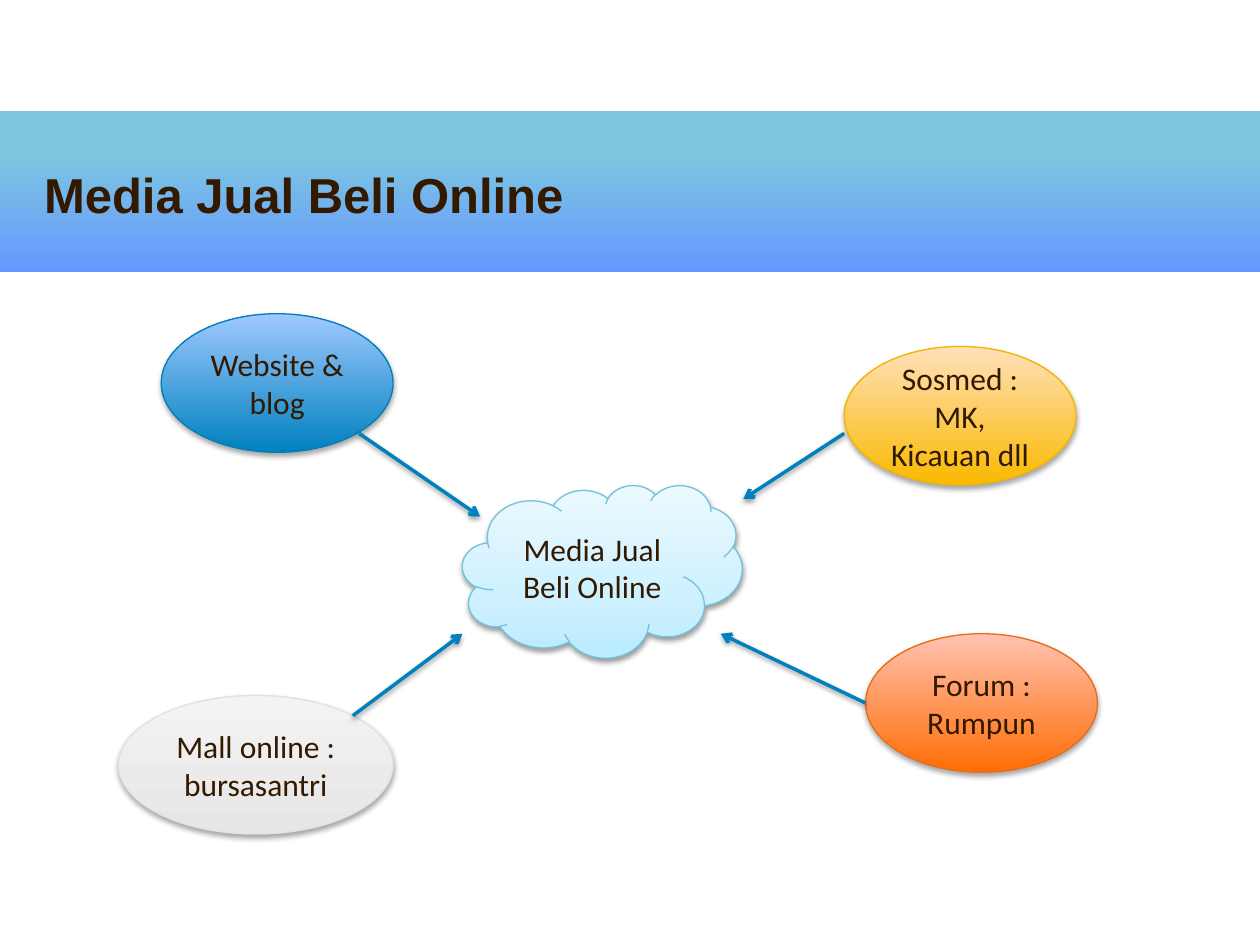
from dataclasses import dataclass

from lxml.etree import SubElement
from pptx import Presentation
from pptx.dml.color import RGBColor
from pptx.enum.shapes import MSO_CONNECTOR, MSO_SHAPE
from pptx.enum.text import MSO_ANCHOR as Anchor, PP_ALIGN as Align
from pptx.oxml.ns import qn
from pptx.util import Inches, Pt

INK = "321900"
ARROW_BLUE = "0081BE"


@dataclass(frozen=True)
class Bubble:
    text: str
    box: tuple[float, float, float, float]
    stops: tuple[tuple[int, str], ...]
    outline: str
    kind: MSO_SHAPE = MSO_SHAPE.OVAL
    shadow_alpha: int = 35
    shadow_distance: float = 1.8


@dataclass(frozen=True)
class Arrow:
    start: tuple[float, float]
    end: tuple[float, float]


BUBBLES = [
    Bubble("Media Jual Beli Online", (3.67, 3.85, 2.22, 1.37),
           ((0, "BAEBFF"), (35, "CEF1FF"), (100, "ECF9FF")), "73C2DB",
           MSO_SHAPE.CLOUD, 38, 1.6),
    Bubble("Sosmed : MK, Kicauan dll", (6.7, 2.75, 1.84, 1.1),
           ((0, "FAB900"), (100, "FFE0BA")), "F4B500"),
    Bubble("Forum : Rumpun", (6.87, 5.03, 1.84, 1.1),
           ((0, "FF6D04"), (100, "FFC2B2")), "E76E16"),
    Bubble("Website & blog", (1.28, 2.49, 1.84, 1.1),
           ((0, "0081BE"), (100, "9FC9FF")), "007EBA"),
    Bubble("Mall online : bursasantri", (0.94, 5.52, 2.18, 1.1),
           ((0, "E6E6E6"), (100, "F3F3F3")), "E1E1E1"),
]

ARROWS = [
    Arrow((2.85, 3.44), (3.81, 4.1)),
    Arrow((6.7, 3.44), (5.9, 3.96)),
    Arrow((6.87, 5.58), (5.72, 5.03)),
    Arrow((2.8, 5.68), (3.67, 5.03)),
]


def color(value: str) -> RGBColor:
    return RGBColor.from_string(value)


def write(shape, text: str, *, font: str = "Calibri", size: float = 18,
          bold: bool = False, align=Align.CENTER, anchor=Anchor.MIDDLE) -> None:
    frame = shape.text_frame
    frame.word_wrap = True
    frame.vertical_anchor = anchor
    frame.text = text
    paragraph = frame.paragraphs[0]
    paragraph.alignment = align
    paragraph.space_before = Pt(0)
    face = paragraph.runs[0].font
    face.name, face.size, face.bold = font, Pt(size), bold
    face.color.rgb = color(INK)


def fill_gradient(shape, stops: tuple[tuple[int, str], ...], angle: int) -> None:
    """Fill along an angle given in degrees, clockwise from the right."""
    shape.fill.gradient()
    shape.fill.gradient_angle = 360 - angle
    stop_list = shape.fill._xPr.find(qn("a:gradFill")).find(qn("a:gsLst"))
    for stop in list(stop_list):
        stop_list.remove(stop)
    for position, value in stops:
        stop = SubElement(stop_list, qn("a:gs"), pos=str(position * 1000))
        SubElement(stop, qn("a:srgbClr"), val=value)


def cast_shadow(properties, alpha: int, distance: float) -> None:
    """Add a soft black shadow that falls straight down."""
    effects = properties.find(qn("a:effectLst"))
    if effects is None:
        effects = SubElement(properties, qn("a:effectLst"))
    shadow = SubElement(effects, qn("a:outerShdw"), blurRad=str(Pt(3.1)),
                        dist=str(Pt(distance)), dir="5400000", rotWithShape="0")
    black = SubElement(shadow, qn("a:srgbClr"), val="000000")
    SubElement(black, qn("a:alpha"), val=str(alpha * 1000))


def draw_band(slide) -> None:
    band = slide.shapes.add_shape(MSO_SHAPE.RECTANGLE, 0, Inches(0.88),
                                  Inches(10), Inches(1.28))
    band.shadow.inherit = False
    band.line.fill.background()
    fill_gradient(band, ((21, "7DC8DF"), (100, "6699FF")), 90)
    # Behind the title placeholder
    slide.shapes._spTree.insert(2, band._element)


def draw_heading(slide, text: str) -> None:
    heading = slide.shapes.title
    heading.left, heading.top = Inches(0.25), Inches(1.1)
    heading.width, heading.height = Inches(7.1), Inches(0.72)
    write(heading, text, font="Arial", size=28, bold=True,
          align=Align.LEFT, anchor=Anchor.BOTTOM)


def draw_bubble(slide, bubble: Bubble) -> None:
    shape = slide.shapes.add_shape(bubble.kind, *map(Inches, bubble.box))
    fill_gradient(shape, bubble.stops, 270)
    shape.line.color.rgb = color(bubble.outline)
    shape.line.width = Pt(0.75)
    shape.shadow.inherit = False
    cast_shadow(shape._element.spPr, bubble.shadow_alpha, bubble.shadow_distance)
    write(shape, bubble.text)


def draw_arrow(slide, arrow: Arrow) -> None:
    connector = slide.shapes.add_connector(
        MSO_CONNECTOR.STRAIGHT, *map(Inches, arrow.start + arrow.end))
    connector.line.color.rgb = color(ARROW_BLUE)
    connector.line.width = Pt(2)
    properties = connector._element.spPr
    SubElement(properties.find(qn("a:ln")), qn("a:tailEnd"), type="arrow")
    cast_shadow(properties, 38, 1.6)


def main() -> None:
    deck = Presentation()
    deck.slide_width, deck.slide_height = Inches(10), Inches(7.5)
    title_only = deck.slide_layouts[5]
    slide = deck.slides.add_slide(title_only)
    draw_band(slide)
    draw_heading(slide, "Media Jual Beli Online")
    for bubble in BUBBLES:
        draw_bubble(slide, bubble)
    for arrow in ARROWS:
        draw_arrow(slide, arrow)
    deck.save("out.pptx")


if __name__ == "__main__":
    main()
